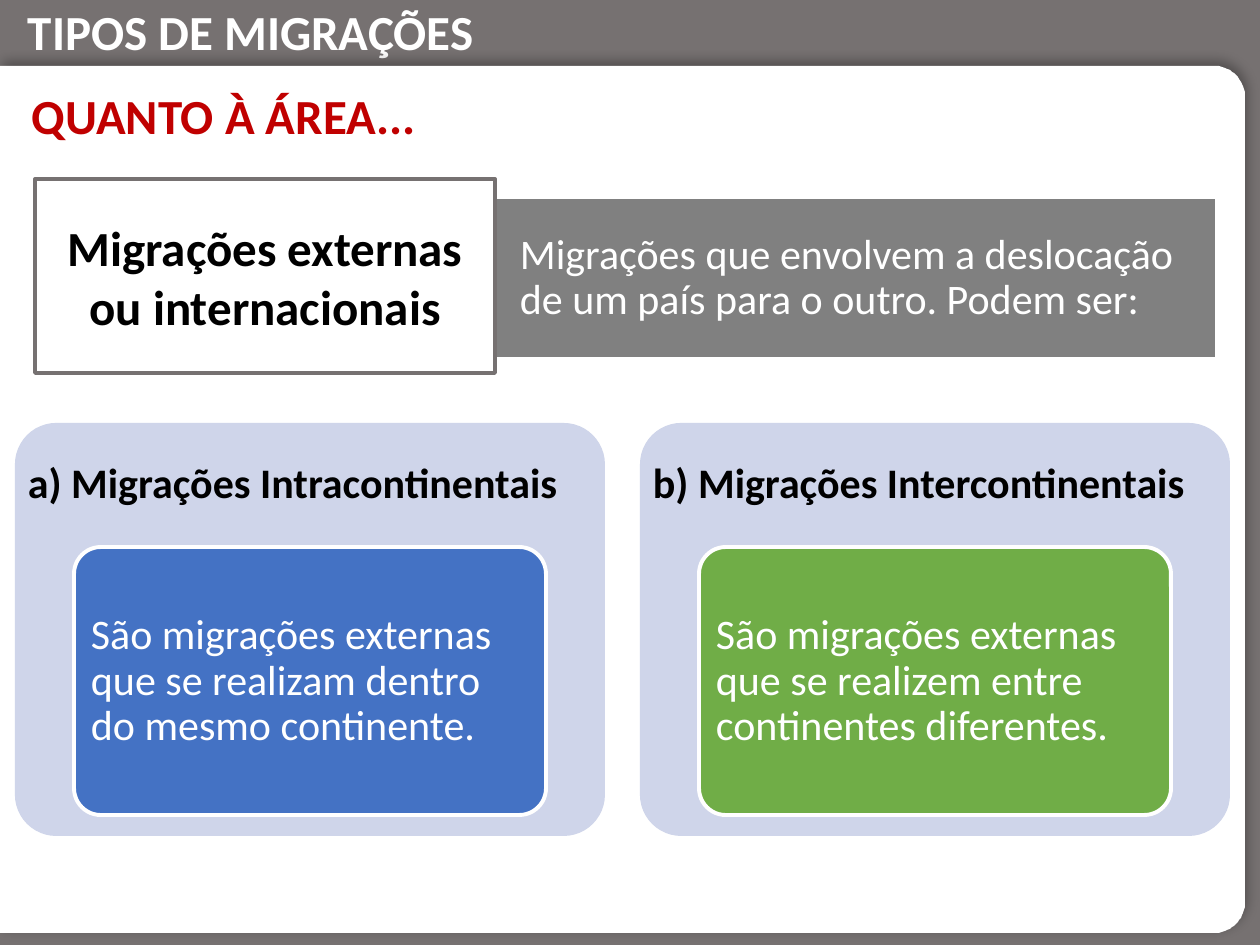
import math
from lxml import etree
from pptx import Presentation
from pptx import util as u
from pptx.dml.color import RGBColor
from pptx.enum import shapes, text
from pptx.oxml import ns

SCALE = 914400 / 126
FONT = "Calibri"
WHITE, BLACK, GREY = "FFFFFF", "000000", "767171"
LEFT, MID = text.PP_ALIGN.LEFT, text.PP_ALIGN.CENTER
RECT = shapes.MSO_SHAPE.RECTANGLE
ROUND = shapes.MSO_SHAPE.ROUNDED_RECTANGLE


def px(n):
    return u.Emu(round(n * SCALE))


def color(code):
    return RGBColor.from_string(code)


def paint(shape, fill, line=None):
    shape.shadow.inherit = False
    if fill:
        shape.fill.solid()
        shape.fill.fore_color.rgb = color(fill)
    else:
        shape.fill.background()
    if line:
        shape.line.color.rgb = color(line)
        shape.line.width = u.Pt(2.25)
    else:
        shape.line.fill.background()


def write(shape, words, size, tint, bold=False, align=LEFT, pads=(13, 6, 13, 6),
          space=1.0, anchor=text.MSO_ANCHOR.MIDDLE):
    frame = shape.text_frame
    frame.text = words
    frame.word_wrap = True
    frame.auto_size = text.MSO_AUTO_SIZE.NONE
    frame.vertical_anchor = anchor
    frame.margin_left, frame.margin_top, frame.margin_right, frame.margin_bottom = map(px, pads)
    para = frame.paragraphs[0]
    para.alignment = align
    para.line_spacing = space
    font = para.font
    font.name, font.size, font.bold = FONT, u.Pt(size), bold
    font.color.rgb = color(tint)


def add_box(tree, kind, place, fill, line=None, curve=None):
    box = tree.add_shape(kind, *map(px, place))
    if curve is not None:
        box.adjustments[0] = curve
    paint(box, fill, line)
    return box


def add_label(tree, place, words, tint, pads, bold=False):
    label = tree.add_textbox(*map(px, place))
    write(label, words, 24, tint, bold, pads=pads, space=0.9)


def add_shade(shape):
    effects = shape._element.spPr.find(ns.qn("a:effectLst"))
    shade = etree.SubElement(effects, ns.qn("a:outerShdw"), blurRad=str(u.Pt(7)),
                             dist=str(u.Pt(3)), dir=str(315 * 60000),
                             algn="bl", rotWithShape="0")
    tint = etree.SubElement(shade, ns.qn("a:srgbClr"), val=BLACK)
    etree.SubElement(tint, ns.qn("a:alpha"), val="30000")


def add_page(tree, top, right, base, bend):
    def arc(y, start):
        turns = [math.radians(start + step * 5) for step in range(19)]
        return [(right - bend + bend * math.cos(t), y + bend * math.sin(t)) for t in turns]

    points = arc(top + bend, -90) + arc(base - bend, 0) + [(0, base)]
    form = tree.build_freeform(0, top, scale=SCALE)
    form.add_line_segments(points, close=True)
    page = form.convert_to_shape()
    paint(page, WHITE)
    add_shade(page)


def add_title(slide, words):
    title = slide.shapes.title
    slide.shapes._spTree.append(title._element)
    title.left, title.top, title.width, title.height = map(px, (15, -5, 1181, 72))
    write(title, words, 28, WHITE, True, anchor=text.MSO_ANCHOR.TOP)


def add_card(tree, left, head, body, fill):
    group = tree.add_group_shape().shapes
    add_box(group, ROUND, (left, 423, 590, 413), "CFD5EA", curve=0.1)
    add_label(group, (left, 423, 590, 124), head, BLACK, (13, 13, 13, 13), True)
    add_box(group, ROUND, (left + 59, 547, 472, 268), fill, WHITE, 0.1)
    add_label(group, (left + 67, 555, 456, 253), body, WHITE, (9, 6, 9, 6))


def main():
    deck = Presentation()
    deck.slide_width, deck.slide_height = px(1260), px(945)
    slide = deck.slides.add_slide(deck.slide_layouts[5])
    tree = slide.shapes

    add_box(tree, RECT, (0, 0, 1260, 945), GREY)
    add_title(slide, "TIPOS DE MIGRAÇÕES")
    add_page(tree, 66, 1245, 933, 31)

    band = add_box(tree, RECT, (471, 199, 744, 158), "808080")
    write(band, "Migrações que envolvem a deslocação de um país para o outro. Podem ser:",
          24, WHITE, pads=(49, 8, 9, 8), space=0.9)
    topic = add_box(tree, RECT, (15, 66, 436, 97), None)
    write(topic, "QUANTO À ÁREA...", 28, "C00000", True, text.PP_ALIGN.JUSTIFY, (17, 6, 17, 6))
    term = add_box(tree, RECT, (35, 179, 460, 194), WHITE, GREY)
    write(term, "Migrações externas ou internacionais", 28, BLACK, True, MID, (15, 15, 15, 15))

    cards = [
        ("a) Migrações Intracontinentais",
         "São migrações externas que se realizam dentro do mesmo continente.", "4472C4"),
        ("b) Migrações Intercontinentais",
         "São migrações externas que se realizem entre continentes diferentes.", "70AD47"),
    ]
    for i, card in enumerate(cards):
        add_card(tree, 15 + i * 625, *card)

    deck.save("out.pptx")


if __name__ == "__main__":
    main()
